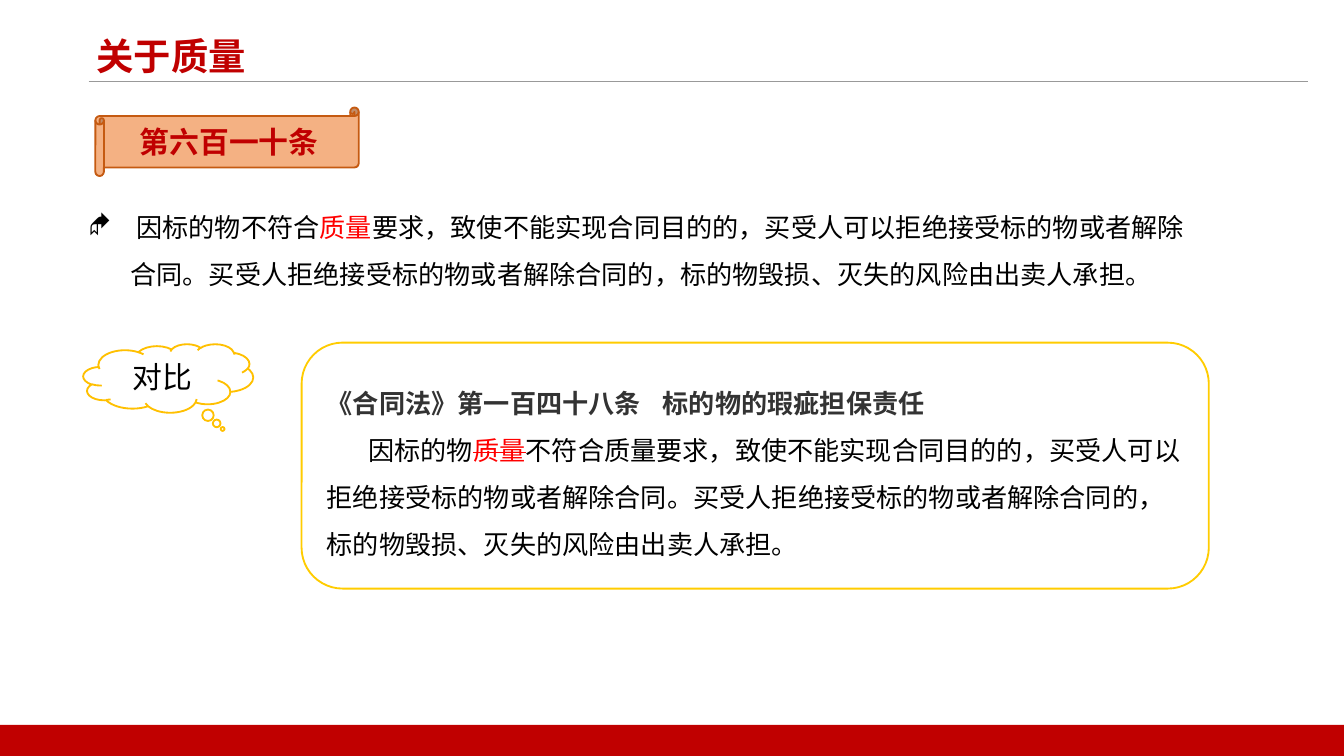
from lxml import etree
from pptx import Presentation
from pptx.dml.color import RGBColor
from pptx.enum.shapes import MSO_CONNECTOR, MSO_SHAPE
from pptx.enum.text import MSO_ANCHOR, MSO_AUTO_SIZE, PP_ALIGN
from pptx.oxml.ns import qn
from pptx.util import Inches, Pt

RECTANGLE = MSO_SHAPE.RECTANGLE
SCROLL = MSO_SHAPE.HORIZONTAL_SCROLL
CLOUD = MSO_SHAPE.CLOUD_CALLOUT
ROUNDED = MSO_SHAPE.ROUNDED_RECTANGLE
STRAIGHT = MSO_CONNECTOR.STRAIGHT
MIDDLE = MSO_ANCHOR.MIDDLE
GROW = MSO_AUTO_SIZE.SHAPE_TO_FIT_TEXT
CENTER = PP_ALIGN.CENTER
LEFT = PP_ALIGN.LEFT

FONT = "Noto Sans CJK SC"
COLORS = {
    "white": "FFFFFF",
    "black": "000000",
    "dark": "333333",
    "gray": "999999",
    "crimson": "C00000",
    "red": "FF0000",
    "peach": "F4B183",
    "rust": "C55A11",
    "amber": "FFC000",
    "yellow": "FFCC00",
}


def color(name):
    return RGBColor.from_string(COLORS[name])


def add_text(paragraph, text, size=14, ink="black", bold=False, font=FONT, strike=False):
    run = paragraph.add_run()
    run.text = text
    run.font.size = Pt(size)
    run.font.bold = bold
    run.font.color.rgb = color(ink)
    run.font.name = font
    properties = run._r.get_or_add_rPr()
    etree.SubElement(properties, qn("a:ea"), typeface=FONT)
    if strike:
        properties.set("strike", "sngStrike")


class QualitySlide:
    def __init__(self, presentation):
        self.slide = presentation.slides.add_slide(presentation.slide_layouts[6])
        self.slide.background.fill.solid()
        self.slide.background.fill.fore_color.rgb = color("white")
        self.column = presentation.slide_width / 100
        self.row = self.column

    def place(self, left, top, width, height):
        return (int(left * self.column), int(top * self.row),
                int(width * self.column), int(height * self.row))

    def rule(self, left, right, top, ink):
        start, level, end, _ = self.place(left, top, right, 0)
        line = self.slide.shapes.add_connector(STRAIGHT, start, level, end, level)
        line.line.color.rgb = color(ink)
        line.line.width = Pt(0.5)
        etree.SubElement(line._element.spPr, qn("a:effectLst"))

    def shape(self, kind, box, fill=None, outline=None, adjustments=()):
        shape = self.slide.shapes.add_shape(kind, *self.place(*box))
        shape.shadow.inherit = False
        if fill:
            shape.fill.solid()
            shape.fill.fore_color.rgb = color(fill)
        else:
            shape.fill.background()
        if outline:
            shape.line.color.rgb = color(outline)
            shape.line.width = Pt(1)
        else:
            shape.line.fill.background()
        for index, value in enumerate(adjustments):
            shape.adjustments[index] = value
        shape.text_frame.word_wrap = True
        shape.text_frame.vertical_anchor = MIDDLE
        return shape.text_frame

    def text_box(self, box):
        frame = self.slide.shapes.add_textbox(*self.place(*box)).text_frame
        frame.word_wrap = True
        return frame

    def paragraph(self, frame, runs, first=True, align=LEFT, spacing=None,
                  margin=0, indent=0, bullet=None, tab=None):
        paragraph = frame.paragraphs[0] if first else frame.add_paragraph()
        paragraph.alignment = align
        if spacing:
            paragraph.line_spacing = spacing
        properties = paragraph._p.get_or_add_pPr()
        properties.set("marL", str(int(margin * self.column)))
        properties.set("indent", str(int(indent * self.column)))
        if bullet:
            etree.SubElement(properties, qn("a:buFont"), typeface="Wingdings", charset="2")
            etree.SubElement(properties, qn("a:buChar"), char=bullet)
        if tab:
            stops = etree.SubElement(properties, qn("a:tabLst"))
            etree.SubElement(stops, qn("a:tab"), pos=str(int(tab * self.column)), algn="l")
        for text, style in runs:
            add_text(paragraph, text, **style)


def main():
    presentation = Presentation()
    presentation.slide_width = Inches(10)
    presentation.slide_height = presentation.slide_width * 9 // 16
    page = QualitySlide(presentation)
    consequence = "要求，致使不能实现合同目的的，买受人可以拒绝接受标的物或者解除合同。买受人拒绝接受标的物或者解除合同的，标的物毁损、灭失的风险由出卖人承担。"

    page.rule(6.6, 97.3, 6.05, "gray")
    title = page.text_box((6.2, 2, 32.5, 5.1))
    page.paragraph(title, [("关于质量", dict(size=20, ink="crimson", bold=True))])
    page.shape(RECTANGLE, (0, 53.95, 100, 2.3), fill="crimson")

    scroll = page.shape(SCROLL, (7.1, 8, 19.6, 5.1), "peach", "rust")
    page.paragraph(scroll, [("第六百一十条", dict(size=16, ink="crimson", bold=True))],
                   align=CENTER)

    article = page.text_box((5.6, 14.1, 84.3, 7.5))
    article.auto_size = GROW
    page.paragraph(article, [
        (" 因标的物不符合", {}),
        ("质量", dict(ink="red")),
        (consequence, {}),
    ], spacing=1.5, margin=3.13, indent=-3.13, bullet="◆")

    cloud = page.shape(CLOUD, (6.2, 25.6, 12.64, 5.1), "white", "amber", (0.32, 0.74))
    page.paragraph(cloud, [("对比", dict(size=16))], align=CENTER)

    comparison = page.shape(ROUNDED, (22.44, 25.5, 67.5, 18.3), outline="yellow")
    page.paragraph(comparison, [
        ("《合同法》第一百四十八条\t标的物的瑕疵担保责任",
         dict(ink="dark", bold=True, font="Arial")),
    ], spacing=1.5, tab=24.4)
    page.paragraph(comparison, [
        ("因标的物", {}),
        ("质量", dict(ink="red", strike=True)),
        ("不符合质量" + consequence, {}),
    ], first=False, spacing=1.5, indent=3.1)

    presentation.save("out.pptx")


if __name__ == "__main__":
    main()
